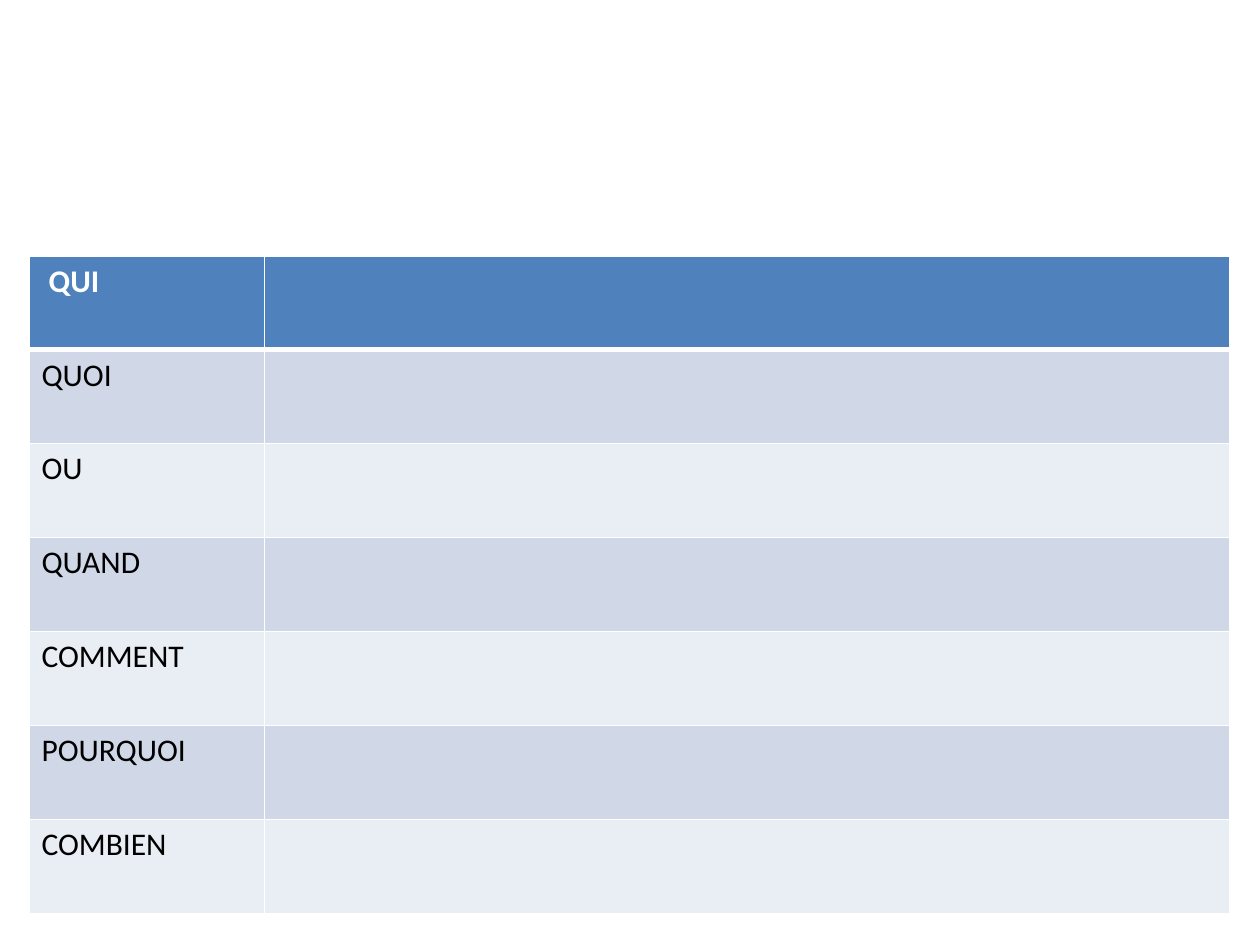
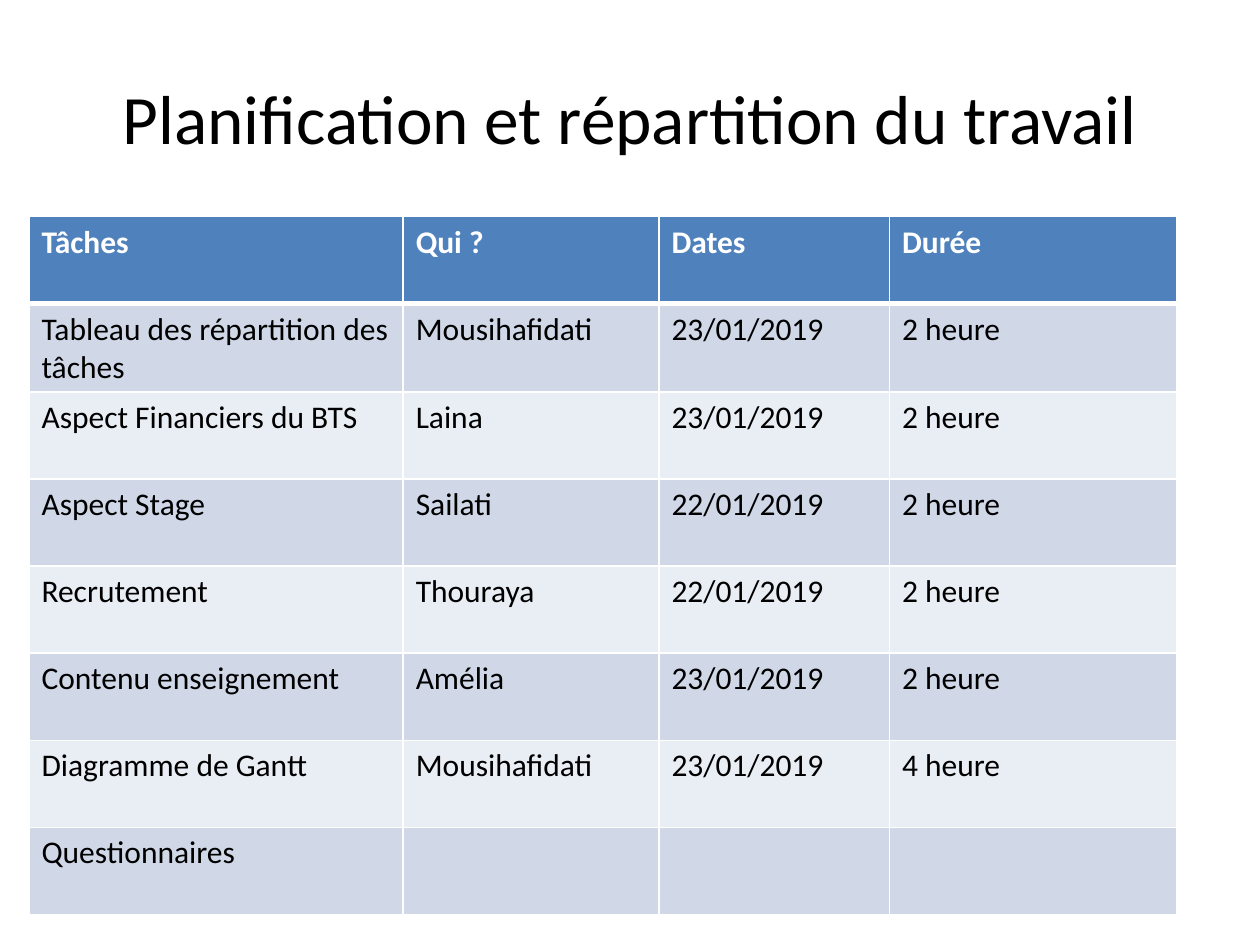
from lxml.etree import SubElement
from pptx import Presentation
from pptx.dml.color import RGBColor
from pptx.enum.text import MSO_ANCHOR, PP_ALIGN
from pptx.oxml.ns import qn
from pptx.util import Inches, Pt

QUESTIONS = [" QUI", "QUOI", "OU", "QUAND", "COMMENT", "POURQUOI", "COMBIEN"]

PLAN_TITLE = "Planification et répartition du travail"
PLAN = [
    ("Tâches", "Qui ?", "Dates", "Durée"),
    ("Tableau des répartition des tâches", "Mousihafidati", "23/01/2019", "2 heure"),
    ("Aspect Financiers du BTS", "Laina", "23/01/2019", "2 heure"),
    ("Aspect Stage", "Sailati", "22/01/2019", "2 heure"),
    ("Recrutement", "Thouraya", "22/01/2019", "2 heure"),
    ("Contenu enseignement", "Amélia", "23/01/2019", "2 heure"),
    ("Diagramme de Gantt", "Mousihafidati", "23/01/2019", "4 heure"),
    ("Questionnaires", "", "", ""),
]

COLORS = {
    "header": "4F81BD",
    "odd_row": "D0D8E8",
    "even_row": "E9EDF4",
    "rule": "FFFFFF",
    "header_text": "FFFFFF",
    "text": "000000",
}
FONT = "Calibri"
TITLE_SIZE, CELL_SIZE = 39.6, 18
THIN_RULE, HEADER_RULE = 1, 3
SLIDE_WIDTH, SLIDE_HEIGHT = 10, 7.5
TABLE_LEFT, TABLE_BOTTOM = 0.23, 7.25


def color(name):
    return RGBColor.from_string(COLORS[name])


def add_text(paragraph, text, size, color_name, bold=False):
    run = paragraph.add_run()
    run.text = text
    run.font.name = FONT
    run.font.size = Pt(size)
    run.font.bold = bold
    run.font.color.rgb = color(color_name)


def add_title(slide, text):
    margin = SLIDE_WIDTH / 20
    box = slide.shapes.add_textbox(Inches(margin), Inches(SLIDE_HEIGHT / 25),
                                   Inches(SLIDE_WIDTH - 2 * margin), Inches(SLIDE_HEIGHT / 6))
    frame = box.text_frame
    frame.word_wrap = True
    frame.vertical_anchor = MSO_ANCHOR.MIDDLE
    paragraph = frame.paragraphs[0]
    paragraph.alignment = PP_ALIGN.CENTER
    add_text(paragraph, text, TITLE_SIZE, "text")


def add_borders(cell, row_index):
    """Rule all four sides, thicker between the header and the first row."""
    widths = {
        "L": THIN_RULE,
        "R": THIN_RULE,
        "T": HEADER_RULE if row_index == 1 else THIN_RULE,
        "B": HEADER_RULE if row_index == 0 else THIN_RULE,
    }
    properties = cell._tc.get_or_add_tcPr()
    for side, width in widths.items():
        line = SubElement(properties, qn(f"a:ln{side}"), w=str(Pt(width)))
        fill = SubElement(line, qn("a:solidFill"))
        SubElement(fill, qn("a:srgbClr"), val=COLORS["rule"])


def add_banded_table(slide, rows, column_widths, top):
    """Fill the height from top to the shared bottom edge with equal rows."""
    height = TABLE_BOTTOM - top
    table = slide.shapes.add_table(len(rows), len(column_widths), Inches(TABLE_LEFT), Inches(top),
                                   Inches(sum(column_widths)), Inches(height)).table
    for column, width in zip(table.columns, column_widths):
        column.width = Inches(width)
    for row_index, texts in enumerate(rows):
        is_header = row_index == 0
        fill_name = "header" if is_header else "odd_row" if row_index % 2 else "even_row"
        table.rows[row_index].height = Inches(height / len(rows))
        for column_index, text in enumerate(texts):
            cell = table.cell(row_index, column_index)
            add_borders(cell, row_index)
            cell.fill.solid()
            cell.fill.fore_color.rgb = color(fill_name)
            if text:
                add_text(cell.text_frame.paragraphs[0], text, CELL_SIZE,
                         "header_text" if is_header else "text", is_header)


def main():
    presentation = Presentation()
    presentation.slide_width = Inches(SLIDE_WIDTH)
    presentation.slide_height = Inches(SLIDE_HEIGHT)
    blank = presentation.slide_layouts[6]

    questions_slide = presentation.slides.add_slide(blank)
    add_banded_table(questions_slide, [(question, "") for question in QUESTIONS],
                     (1.87, 7.66), top=2.03)

    plan_slide = presentation.slides.add_slide(blank)
    add_title(plan_slide, PLAN_TITLE)
    add_banded_table(plan_slide, PLAN, (2.97, 2.03, 1.83, 2.28), top=1.72)

    presentation.save("out.pptx")


if __name__ == "__main__":
    main()
